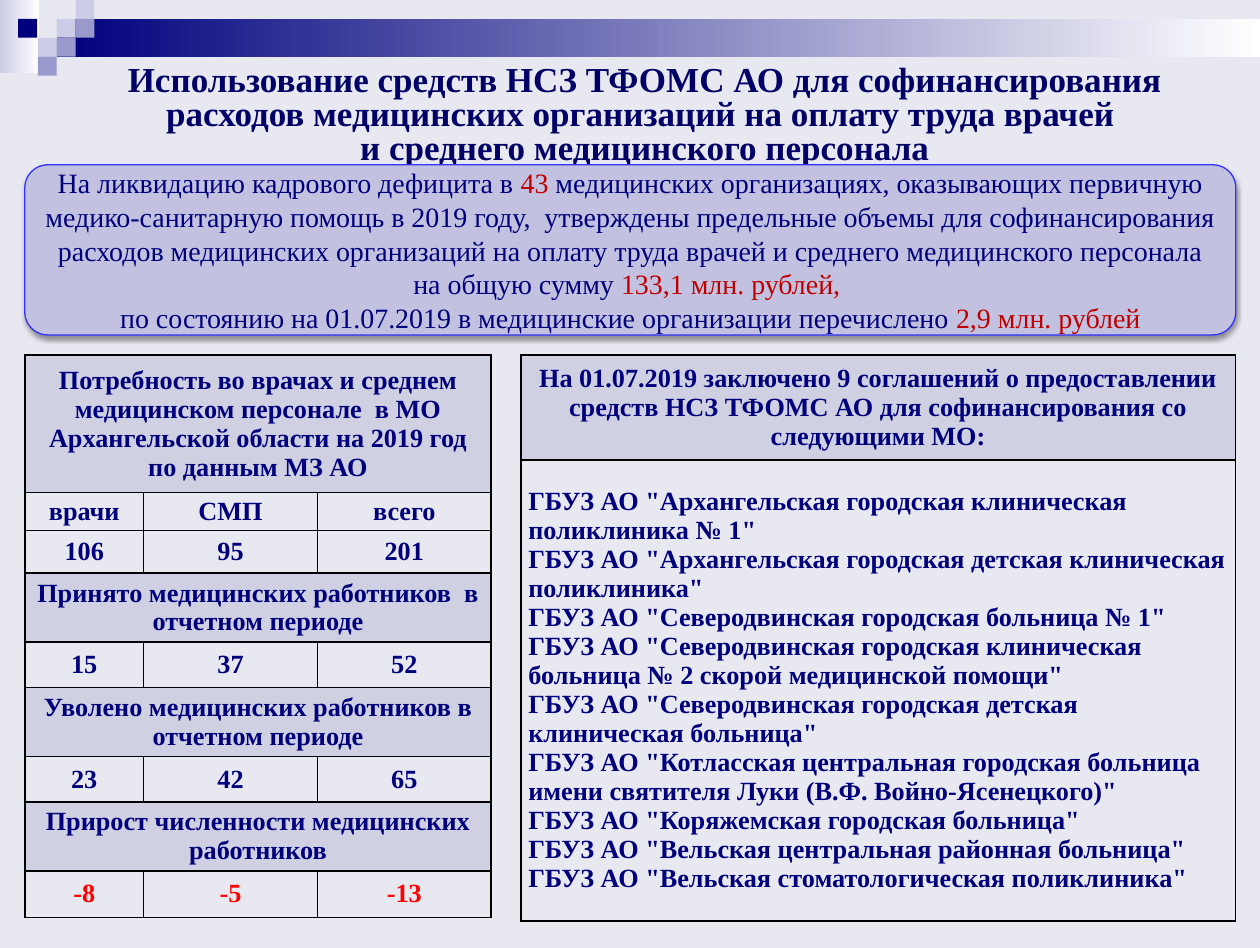
"""Build the slide on co-financing the pay of medical staff."""
from dataclasses import dataclass
from typing import Any, Optional

import pptx
import pptx.dml.color
import pptx.enum.shapes
import pptx.enum.text
import pptx.oxml
import pptx.oxml.ns
import pptx.util

Pt = pptx.util.Pt
RGBColor = pptx.dml.color.RGBColor
Align = pptx.enum.text.PP_ALIGN
Anchor = pptx.enum.text.MSO_ANCHOR
ShapeKind = pptx.enum.shapes.MSO_SHAPE

FONT = "Times New Roman"
BACKGROUND = RGBColor(0xE8, 0xE8, 0xF1)
NAVY = RGBColor(0x00, 0x00, 0x7D)
TITLE_NAVY = RGBColor(0x00, 0x00, 0x66)
WHITE = RGBColor(0xFF, 0xFF, 0xFF)
LILAC = RGBColor(0xCC, 0xCC, 0xE6)
VIOLET = RGBColor(0x99, 0x99, 0xCC)
PANEL = RGBColor(0xC2, 0xC2, 0xE0)
PANEL_LINE = RGBColor(0x33, 0x33, 0xFF)
HEADING = RGBColor(0xD0, 0xD0, 0xE3)
DARK_RED = RGBColor(0xC0, 0x00, 0x00)
RED = RGBColor(0xFF, 0x00, 0x00)


@dataclass
class Block:
    left: float
    top: float
    width: float
    height: float
    fill: RGBColor
    fade_to: Optional[RGBColor] = None


@dataclass
class Row:
    height: float
    texts: list[str]
    color: RGBColor = NAVY
    heading: bool = False
    align: Any = Align.CENTER


TILE = 10.8
DECORATION = [
    Block(0, 0, 22.3, 42, LILAC, WHITE),
    Block(32.4, TILE, 687.6, 21.6, NAVY, WHITE),
    Block(10.4, TILE, TILE, TILE, NAVY),
] + [
    Block(21.6 + column * TILE, row * TILE, TILE, TILE, color)
    for column, row, color in [
        (1, 1, LILAC), (2, 0, LILAC), (2, 1, VIOLET),
        (0, 2, LILAC), (1, 2, VIOLET), (0, 3, VIOLET),
    ]
]

TITLE = ("Использование средств НСЗ ТФОМС АО для софинансирования расходов медицинских "
         "организаций на оплату труда врачей \nи среднего медицинского персонала")

SUMMARY = [
    ("На ликвидацию кадрового дефицита в ", NAVY),
    ("43", DARK_RED),
    (" медицинских организациях, оказывающих первичную медико-санитарную помощь в 2019 году,  "
     "утверждены предельные объемы для софинансирования расходов медицинских организаций "
     "на оплату труда врачей и среднего медицинского персонала на общую сумму ", NAVY),
    ("133,1 млн. рублей, \n", DARK_RED),
    ("по состоянию на 01.07.2019 в медицинские организации перечислено ", NAVY),
    ("2,9 млн. рублей", DARK_RED),
]

STAFF = [
    Row(78.5, ["Потребность во врачах и среднем медицинском персонале  в МО "
               "Архангельской области на 2019 год по данным МЗ АО"], heading=True),
    Row(21.6, ["врачи", "СМП", "всего"]),
    Row(24.5, ["106", "95", "201"]),
    Row(39.4, ["Принято медицинских работников  в отчетном периоде"], heading=True),
    Row(26, ["15", "37", "52"]),
    Row(39.4, ["Уволено медицинских работников в отчетном периоде"], heading=True),
    Row(26, ["23", "42", "65"]),
    Row(39.4, ["Прирост численности медицинских работников"], heading=True),
    Row(26.6, ["-8", "-5", "-13"], color=RED),
]

HOSPITALS = [
    "Архангельская городская клиническая поликлиника № 1",
    "Архангельская городская детская клиническая поликлиника",
    "Северодвинская городская больница № 1",
    "Северодвинская городская клиническая больница № 2 скорой медицинской помощи",
    "Северодвинская городская детская клиническая больница",
    "Котласская центральная городская больница имени святителя Луки (В.Ф. Войно-Ясенецкого)",
    "Коряжемская городская больница",
    "Вельская центральная районная больница",
    "Вельская стоматологическая поликлиника",
]

AGREEMENTS = [
    Row(59.8, ["На 01.07.2019 заключено 9 соглашений о предоставлении средств НСЗ ТФОМС АО "
               "для софинансирования со следующими МО:"], heading=True),
    Row(263.5, ["\n".join(f'ГБУЗ АО "{name}"' for name in HOSPITALS)], align=Align.LEFT),
]


def write(paragraph: Any, text: str, *, size: float, color: RGBColor, bold: bool = False,
          align: Any = Align.CENTER, spacing: Optional[float] = None) -> None:
    """Append formatted text to a paragraph, with line breaks at newlines."""
    paragraph.alignment = align
    if spacing:
        paragraph.line_spacing = spacing
    for index, line in enumerate(text.split("\n")):
        if index:
            paragraph.add_line_break()
        if line:
            run = paragraph.add_run()
            run.text = line
            run.font.name, run.font.size = FONT, Pt(size)
            run.font.bold, run.font.color.rgb = bold, color


def draw_block(slide: Any, block: Block) -> None:
    """Draw a decorative rectangle, plain or fading to the right."""
    shape = slide.shapes.add_shape(ShapeKind.RECTANGLE, Pt(block.left), Pt(block.top),
                                   Pt(block.width), Pt(block.height))
    shape.shadow.inherit = False
    shape.line.fill.background()
    if block.fade_to is None:
        shape.fill.solid()
        shape.fill.fore_color.rgb = block.fill
        return
    shape.fill.gradient()
    shape.fill.gradient_angle = 0
    for stop, color in zip(shape.fill.gradient_stops, (block.fill, block.fade_to)):
        stop.color.rgb = color


def add_borders(cell: Any) -> None:
    """Give a cell thin black borders on all sides."""
    properties = cell._tc.get_or_add_tcPr()
    for index, side in enumerate("LRTB"):
        properties.insert(index, pptx.oxml.parse_xml(
            f'<a:ln{side} {pptx.oxml.ns.nsdecls("a")} w="12700"><a:solidFill>'
            f'<a:srgbClr val="000000"/></a:solidFill></a:ln{side}>'))


def draw_table(slide: Any, left: float, top: float, widths: list[float], rows: list[Row]) -> None:
    """Draw a bordered table whose heading rows span all columns."""
    table = slide.shapes.add_table(len(rows), len(widths), Pt(left), Pt(top), Pt(sum(widths)),
                                   Pt(sum(row.height for row in rows))).table
    table.first_row = table.horz_banding = False
    for column, width in zip(table.columns, widths):
        column.width = Pt(width)
    for index, row in enumerate(rows):
        table.rows[index].height = Pt(row.height)
        cells = list(table.rows[index].cells)
        for cell in cells:
            cell.fill.background()
            if row.heading:
                cell.fill.solid()
                cell.fill.fore_color.rgb = HEADING
            add_borders(cell)
            cell.vertical_anchor = Anchor.MIDDLE
            cell.margin_left = cell.margin_right = Pt(4.3)
            cell.margin_top = cell.margin_bottom = 0
        if row.heading and len(cells) > 1:
            cells[0].merge(cells[-1])
        for cell, text in zip(cells, row.texts):
            frame = cell.text_frame
            for number, line in enumerate(text.split("\n")):
                paragraph = frame.add_paragraph() if number else frame.paragraphs[0]
                write(paragraph, line, size=15, color=row.color, bold=True, align=row.align)


def draw_title(slide: Any) -> None:
    """Draw the slide heading."""
    frame = slide.shapes.add_textbox(Pt(48), Pt(32.7), Pt(641), Pt(67.7)).text_frame
    frame.word_wrap, frame.vertical_anchor = True, Anchor.MIDDLE
    write(frame.paragraphs[0], TITLE, size=20, color=TITLE_NAVY, bold=True, spacing=0.8)


def draw_summary(slide: Any) -> None:
    """Draw the rounded panel with the total sums."""
    panel = slide.shapes.add_shape(ShapeKind.ROUNDED_RECTANGLE, Pt(14.2), Pt(94.2), Pt(692), Pt(97.2))
    panel.adjustments[0] = 0.135
    panel.fill.solid()
    panel.fill.fore_color.rgb = PANEL
    panel.line.color.rgb, panel.line.width = PANEL_LINE, Pt(0.75)
    panel.shadow.inherit = False
    effects = panel._element.spPr.find(pptx.oxml.ns.qn("a:effectLst"))
    effects.append(pptx.oxml.parse_xml(
        f'<a:outerShdw {pptx.oxml.ns.nsdecls("a")} blurRad="{Pt(3.1)}" dist="{Pt(1.6)}" '
        'dir="5400000" rotWithShape="0"><a:srgbClr val="000000"><a:alpha val="38000"/>'
        '</a:srgbClr></a:outerShdw>'))
    frame = panel.text_frame
    frame.word_wrap, frame.vertical_anchor = True, Anchor.MIDDLE
    for text, color in SUMMARY:
        write(frame.paragraphs[0], text, size=16, color=color)


def main() -> None:
    """Build and save the presentation."""
    presentation = pptx.Presentation()
    presentation.slide_width, presentation.slide_height = Pt(720), Pt(541.75)
    slide = presentation.slides.add_slide(presentation.slide_layouts[6])
    slide.background.fill.solid()
    slide.background.fill.fore_color.rgb = BACKGROUND
    for block in DECORATION:
        draw_block(slide, block)
    draw_title(slide)
    draw_table(slide, 297.6, 203, [408.4], AGREEMENTS)
    draw_table(slide, 14.2, 203, [67.9, 99.3, 99.3], STAFF)
    draw_summary(slide)
    presentation.save("out.pptx")


if __name__ == "__main__":
    main()
